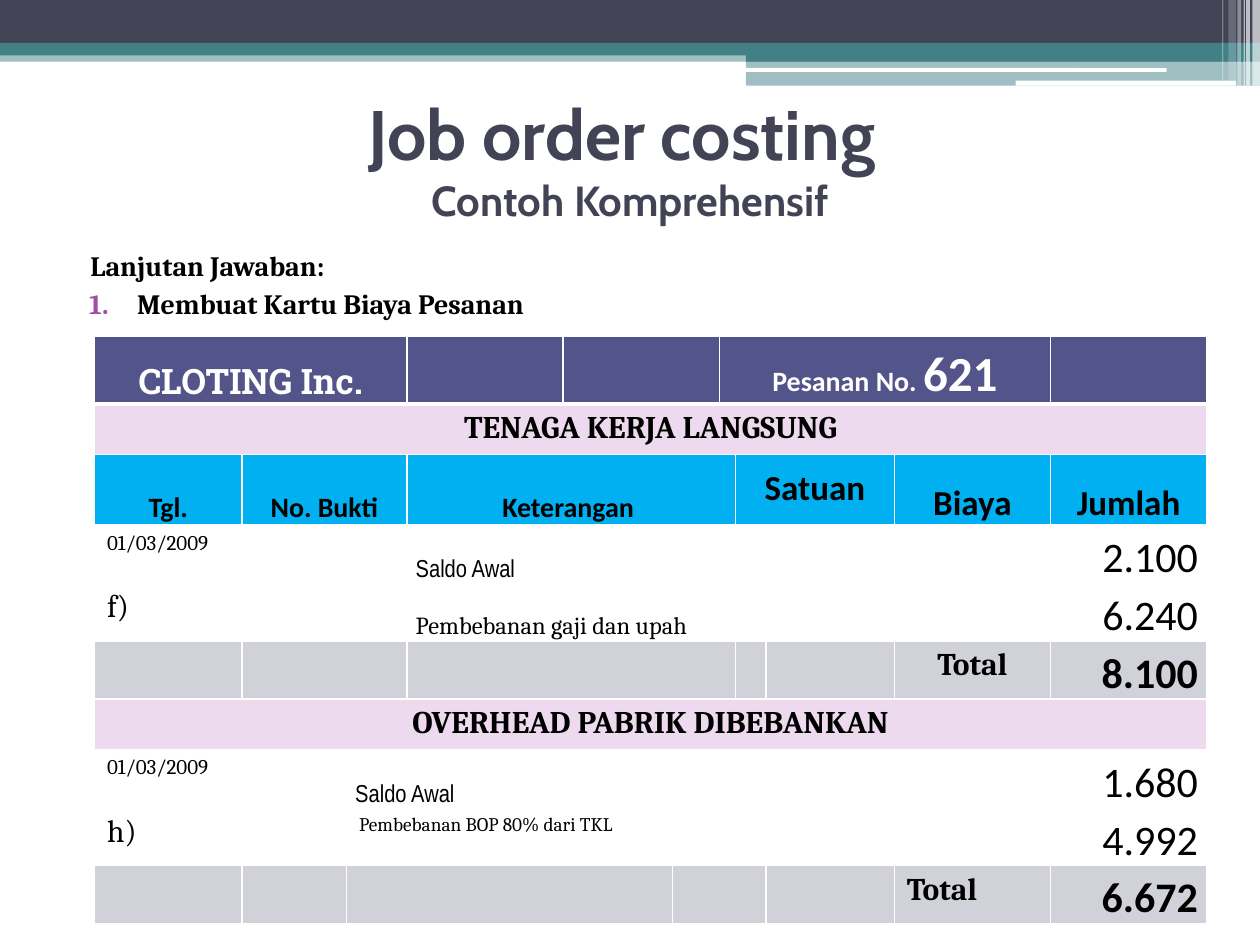
from lxml import etree
from pptx import Presentation
from pptx.dml.color import RGBColor
from pptx.enum import shapes, text
from pptx.oxml.ns import qn
from pptx.util import Inches, Pt

COLORS = {"slate": "424456", "teal": "438086", "white": "FFFFFF", "black": "000000",
          "violet": "A04DA3", "indigo": "53548A", "pink": "EDDAEE", "blue": "00B0F0",
          "gray": "D1D1DA"}
LEFT, CENTER, RIGHT = text.PP_ALIGN.LEFT, text.PP_ALIGN.CENTER, text.PP_ALIGN.RIGHT
TOP, BOTTOM = text.MSO_ANCHOR.TOP, text.MSO_ANCHOR.BOTTOM

# Header bands: left, top, width, height, colour, opacity %, rounded
BANDS = [
    (0, 0.4, 10, 0.09, "teal", 50, False),
    (0, 0, 10, 0.34, "slate", 100, False),
    (0, 0.34, 10, 0.1, "teal", 100, False),
    (5.92, 0.39, 4.08, 0.1, "teal", 100, False),
    (5.92, 0.48, 4.08, 0.2, "teal", 50, False),
    (5.91, 0.54, 3.35, 0.03, "white", 100, True),
    (8.06, 0.64, 1.75, 0.04, "white", 100, True),
]
# Vertical stripes: left, width, height, opacity %
STRIPES = [(9.94, 0.06, 0.68, 65), (9.89, 0.03, 0.68, 65), (9.87, 0.01, 0.68, 60),
           (9.82, 0.03, 0.68, 40), (9.75, 0.06, 0.64, 20), (9.7, 0.01, 0.64, 30)]
BANDS += [(x, 0, w, h, "white", a, False) for x, w, h, a in STRIPES]

TITLE = [("Job order costing ", 40), ("Contoh Komprehensif", 24)]
INTRO = ["Lanjutan Jawaban:", "Membuat Kartu Biaya Pesanan"]

# Cell styles: font, size, bold, colour, alignment, anchor, tight (no vertical inset), line spacing
STYLES = {
    "company": ("Roboto Slab", 20, True, "white", CENTER, BOTTOM, True, 1.15),
    "order": ("Calibri", 16, True, "white", CENTER, BOTTOM, True, 1.15),
    "section": ("Cambria", 18, True, "black", CENTER, TOP, False, 1),
    "head": ("Calibri", 16, True, "black", CENTER, BOTTOM, True, 1.15),
    "unit": ("Calibri", 20, True, "black", CENTER, TOP, False, 1.15),
    "big head": ("Calibri", 20, True, "black", CENTER, BOTTOM, True, 1.15),
    "date": ("Cambria", 12, False, "black", LEFT, TOP, False, 1),
    "item": ("Cambria", 18, False, "black", LEFT, TOP, False, 1),
    "balance": ("Arial Narrow", 14, False, "black", LEFT, BOTTOM, True, 1.15),
    "wages": ("Cambria", 14, False, "black", LEFT, BOTTOM, True, 1.15),
    "overhead": ("Cambria", 11, False, "black", LEFT, TOP, False, 1),
    "amount": ("Calibri", 24, False, "black", RIGHT, TOP, True, 1.15),
    "total": ("Cambria", 18, True, "black", CENTER, TOP, False, 1),
    "total left": ("Cambria", 18, True, "black", LEFT, TOP, False, 1),
    "sum": ("Calibri", 24, True, "black", RIGHT, BOTTOM, True, 1.15),
}
COL_WIDTHS = [1.17, 0.83, 0.48, 1.24, 0.87, 0.37, 0.13, 0.23, 1.02, 1.24, 1.24]
LABOR_SPANS = [1, 2, 4, 1, 1, 1, 1]
OVERHEAD_SPANS = [1, 1, 3, 3, 1, 1, 1]
# Rows: height, fill, column spans, {cell number: (style, text or [(text, size)])}
ROWS = [
    (0.47, "indigo", [3, 1, 2, 4, 1],
     {0: ("company", "CLOTING Inc."), 3: ("order", [("Pesanan No. ", 16), ("621", 28)])}),
    (0.38, "pink", [11], {0: ("section", "TENAGA KERJA LANGSUNG")}),
    (0.56, "blue", [1, 2, 4, 2, 1, 1],
     {0: ("head", "Tgl."), 1: ("head", "No. Bukti"), 2: ("head", "Keterangan "),
      3: ("unit", "Satuan"), 4: ("big head", "Biaya"), 5: ("big head", "Jumlah")}),
    (0.41, "white", LABOR_SPANS,
     {0: ("date", "01/03/2009"), 2: ("balance", "Saldo Awal"), 6: ("amount", "2.100")}),
    (0.41, "white", LABOR_SPANS,
     {0: ("item", "f)"), 2: ("wages", "Pembebanan gaji dan upah"), 6: ("amount", "6.240")}),
    (0.41, "gray", LABOR_SPANS, {5: ("total", "Total"), 6: ("sum", "8.100")}),
    (0.38, "pink", [11], {0: ("section", "OVERHEAD PABRIK DIBEBANKAN")}),
    (0.38, "white", OVERHEAD_SPANS,
     {0: ("date", "01/03/2009"), 2: ("balance", "Saldo Awal"), 6: ("amount", "1.680")}),
    (0.38, "white", OVERHEAD_SPANS,
     {0: ("item", "h)"), 2: ("overhead", "Pembebanan BOP 80% dari TKL"), 6: ("amount", "4.992")}),
    (0.38, "gray", OVERHEAD_SPANS, {5: ("total left", "Total"), 6: ("sum", "6.672")}),
]


def rgb(color):
    return RGBColor.from_string(COLORS[color])


def assign(target, values):
    for key, value in values.items():
        setattr(target, key, value)


def add_run(paragraph, words, font, size, bold, color):
    run = paragraph.add_run()
    run.text = words
    assign(run.font, {"name": font, "size": Pt(size), "bold": bold})
    run.font.color.rgb = rgb(color)


def add_band(slide, x, y, w, h, color, opacity, rounded):
    kind = shapes.MSO_SHAPE.ROUNDED_RECTANGLE if rounded else shapes.MSO_SHAPE.RECTANGLE
    band = slide.shapes.add_shape(kind, Inches(x), Inches(y), Inches(w), Inches(h))
    band.shadow.inherit = False
    band.line.fill.background()
    band.fill.solid()
    band.fill.fore_color.rgb = rgb(color)
    if opacity < 100:
        clr = band.fill._xPr.find(".//" + qn("a:srgbClr"))
        etree.SubElement(clr, qn("a:alpha"), val=str(opacity * 1000))


def set_borders(cell, bottom):
    props = cell._tc.get_or_add_tcPr()
    for side, width in (("L", 1), ("R", 1), ("T", 1), ("B", bottom)):
        line = etree.SubElement(props, qn("a:ln" + side), w=str(Pt(width)))
        fill = etree.SubElement(line, qn("a:solidFill"))
        etree.SubElement(fill, qn("a:srgbClr"), val=COLORS["white"])


def write_cell(cell, style, content):
    font, size, bold, color, align, anchor, tight, spacing = STYLES[style]
    cell.vertical_anchor = anchor
    if tight:
        assign(cell, {"margin_left": Inches(0.07), "margin_right": Inches(0.07),
                      "margin_top": 0, "margin_bottom": 0})
    paragraph = cell.text_frame.paragraphs[0]
    assign(paragraph, {"alignment": align, "line_spacing": spacing})
    pieces = [(content, size)] if isinstance(content, str) else content
    for words, points in pieces:
        add_run(paragraph, words, font, points, bold, color)


def add_title(slide):
    title = slide.shapes.title
    assign(title, {"left": Inches(0.5), "top": Inches(0.67),
                   "width": Inches(9), "height": Inches(1.17)})
    assign(title.text_frame, {"auto_size": text.MSO_AUTO_SIZE.NONE, "word_wrap": True,
                              "vertical_anchor": text.MSO_ANCHOR.MIDDLE})
    heading = title.text_frame.paragraphs[0]
    heading.alignment = CENTER
    for i, (words, size) in enumerate(TITLE):
        if i:
            heading.add_line_break()
        add_run(heading, words, "Cabin", size, True, "slate")


def add_intro(slide):
    frame = slide.shapes.add_textbox(Inches(0.5), Inches(1.92), Inches(9), Inches(0.7)).text_frame
    frame.word_wrap = True
    for i, words in enumerate(INTRO):
        paragraph = frame.add_paragraph() if i else frame.paragraphs[0]
        paragraph.space_before = Pt(3)
        add_run(paragraph, words, "Cambria", 16, True, "black")
        props = paragraph._p.get_or_add_pPr()
        margin, indent = (0.49, -0.38) if i else (0.4, -0.28)
        props.set("marL", str(Inches(margin)))
        props.set("indent", str(Inches(indent)))
    # Number on the last line
    bullet = etree.SubElement(props, qn("a:buClr"))
    etree.SubElement(bullet, qn("a:srgbClr"), val=COLORS["violet"])
    etree.SubElement(props, qn("a:buFont"), typeface="+mj-lt")
    etree.SubElement(props, qn("a:buAutoNum"), type="arabicPeriod")


def add_cost_card(slide):
    heights = [row[0] for row in ROWS]
    card = slide.shapes.add_table(len(ROWS), len(COL_WIDTHS), Inches(0.75), Inches(2.67),
                                  Inches(sum(COL_WIDTHS)), Inches(sum(heights))).table
    assign(card, {"first_row": False, "horz_banding": False})
    for column, width in zip(card.columns, COL_WIDTHS):
        column.width = Inches(width)
    for r, (height, fill, spans, contents) in enumerate(ROWS):
        card.rows[r].height = Inches(height)
        for c in range(len(COL_WIDTHS)):
            cell = card.cell(r, c)
            set_borders(cell, 1 if r else 3)
            cell.fill.solid()
            cell.fill.fore_color.rgb = rgb(fill)
        start = 0
        for i, span in enumerate(spans):
            cell = card.cell(r, start)
            if span > 1:
                cell.merge(card.cell(r, start + span - 1))
            if i in contents:
                write_cell(cell, *contents[i])
            start += span


def main():
    prs = Presentation()
    assign(prs, {"slide_width": Inches(10), "slide_height": Inches(7.5)})
    slide = prs.slides.add_slide(prs.slide_layouts[5])
    for band in BANDS:
        add_band(slide, *band)
    add_intro(slide)
    add_title(slide)
    add_cost_card(slide)
    prs.save("out.pptx")


if __name__ == "__main__":
    main()
